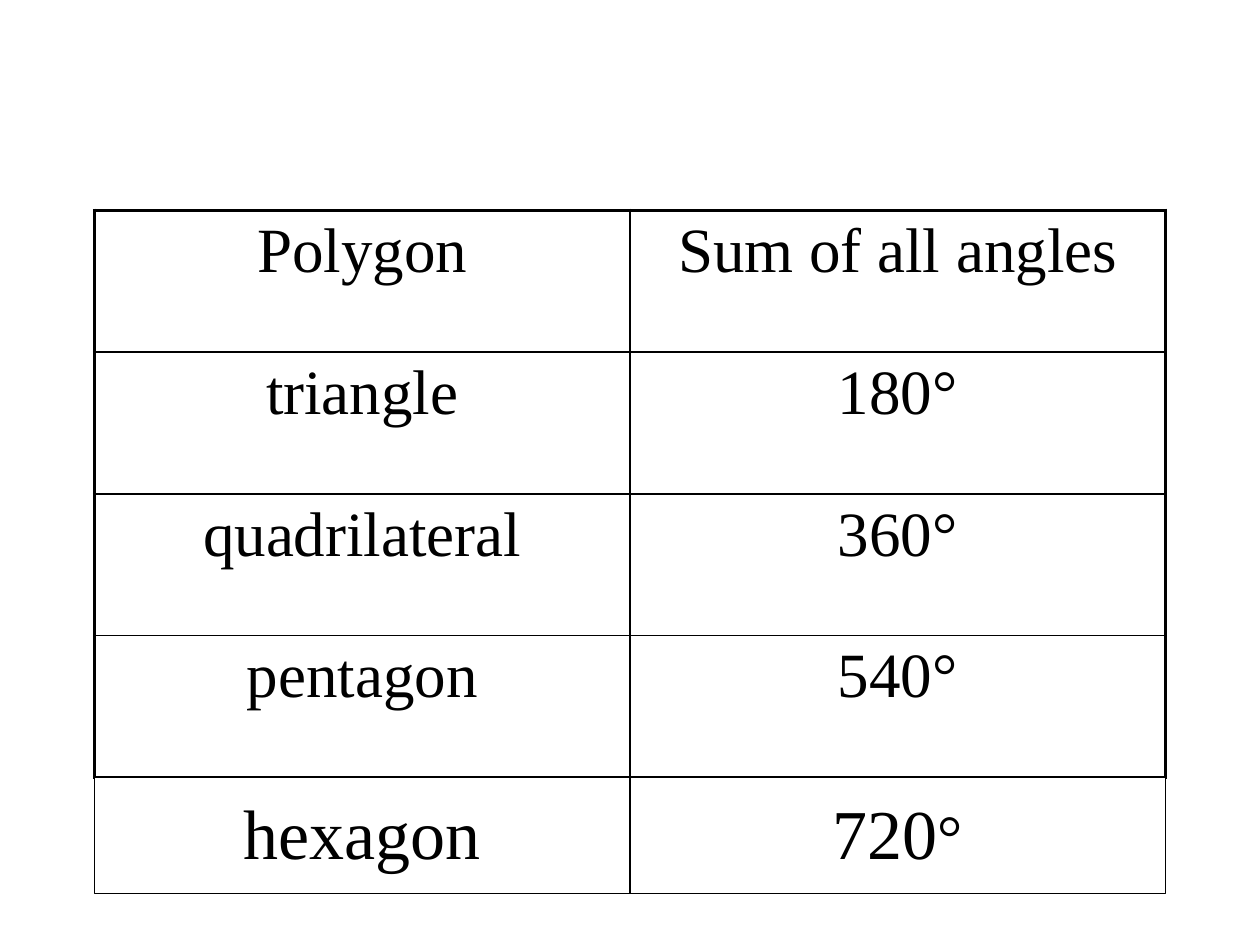
from pptx import Presentation
from pptx.dml.color import RGBColor
from pptx.enum.shapes import MSO_SHAPE as Shape
from pptx.enum.text import PP_ALIGN as Align
from pptx.oxml.ns import qn
from pptx.util import Inches, Pt
from lxml.etree import SubElement

BLACK = RGBColor(0, 0, 0)
WHITE = RGBColor(255, 255, 255)
FONT = "Times New Roman"
THIN, THICK = 1, 2.25
LEFT, COLUMN = 0.75, 4.25
TABLE_TOP, TABLE_HEIGHT = 1.67, 4.5
EXTRA_HEIGHT = 0.92

ROWS = [
    ("Polygon", "Sum of all angles"),
    ("triangle", "180°"),
    ("quadrilateral", "360°"),
    ("pentagon", "540°"),
]
EXTRA_ROW = [[("hexagon", 40)], [("720", 40), ("°", 36)]]


def add_span(para, text, size=36, color=BLACK):
    """Append a formatted run to a centred paragraph."""
    para.alignment = Align.CENTER
    span = para.add_run()
    span.text = text
    span.font.name = FONT
    span.font.size = Pt(size)
    span.font.color.rgb = color


def set_borders(cell, **widths):
    """Draw the cell's four borders, given widths in points by side."""
    properties = cell._tc.get_or_add_tcPr()
    for index, side in enumerate("LRTB"):
        line = properties.makeelement(qn(f"a:ln{side}"), {"w": str(Pt(widths[side]))})
        fill = SubElement(line, qn("a:solidFill"))
        SubElement(fill, qn("a:srgbClr"), val=str(BLACK))
        properties.insert(index, line)


def add_angle_table(page, left, top, width, height):
    """Place the table of polygons and angle sums in the given box."""
    row_count, column_count = len(ROWS), len(ROWS[0])
    table = page.shapes.add_table(
        row_count, column_count, Inches(left), Inches(top), Inches(width), Inches(height)
    ).table
    table.first_row = table.horz_banding = False
    for row, texts in enumerate(ROWS):
        for column, text in enumerate(texts):
            cell = table.cell(row, column)
            cell.fill.background()
            add_span(cell.text_frame.paragraphs[0], text)
            set_borders(
                cell,
                L=THICK if column == 0 else THIN,
                R=THICK if column == column_count - 1 else THIN,
                T=THICK if row == 0 else THIN,
                B=THICK if row == row_count - 1 else THIN,
            )


def add_extra_cell(page, spans, left, top, width, height):
    """Place an outlined box with its centred label below the table."""
    box = page.shapes.add_shape(
        Shape.RECTANGLE, Inches(left), Inches(top), Inches(width), Inches(height)
    )
    box.shadow.inherit = False
    box.fill.solid()
    box.fill.fore_color.rgb = WHITE
    box.line.color.rgb = BLACK
    box.line.width = Pt(0.75)

    label = page.shapes.add_textbox(
        Inches(left), Inches(top), Inches(width), Inches(0.77)
    )
    frame = label.text_frame
    frame.word_wrap = True
    frame.margin_top = Inches(0.1)
    for text, size in spans:
        add_span(frame.paragraphs[0], text, size=size)


def main():
    """Build and save the deck."""
    deck = Presentation()
    deck.slide_width, deck.slide_height = Inches(10), Inches(7.5)
    page = deck.slides.add_slide(deck.slide_layouts[6])
    add_angle_table(page, LEFT, TABLE_TOP, 2 * COLUMN, TABLE_HEIGHT)
    for column, spans in enumerate(EXTRA_ROW):
        add_extra_cell(
            page, spans, LEFT + column * COLUMN, TABLE_TOP + TABLE_HEIGHT,
            COLUMN, EXTRA_HEIGHT,
        )
    deck.save("out.pptx")


if __name__ == "__main__":
    main()
